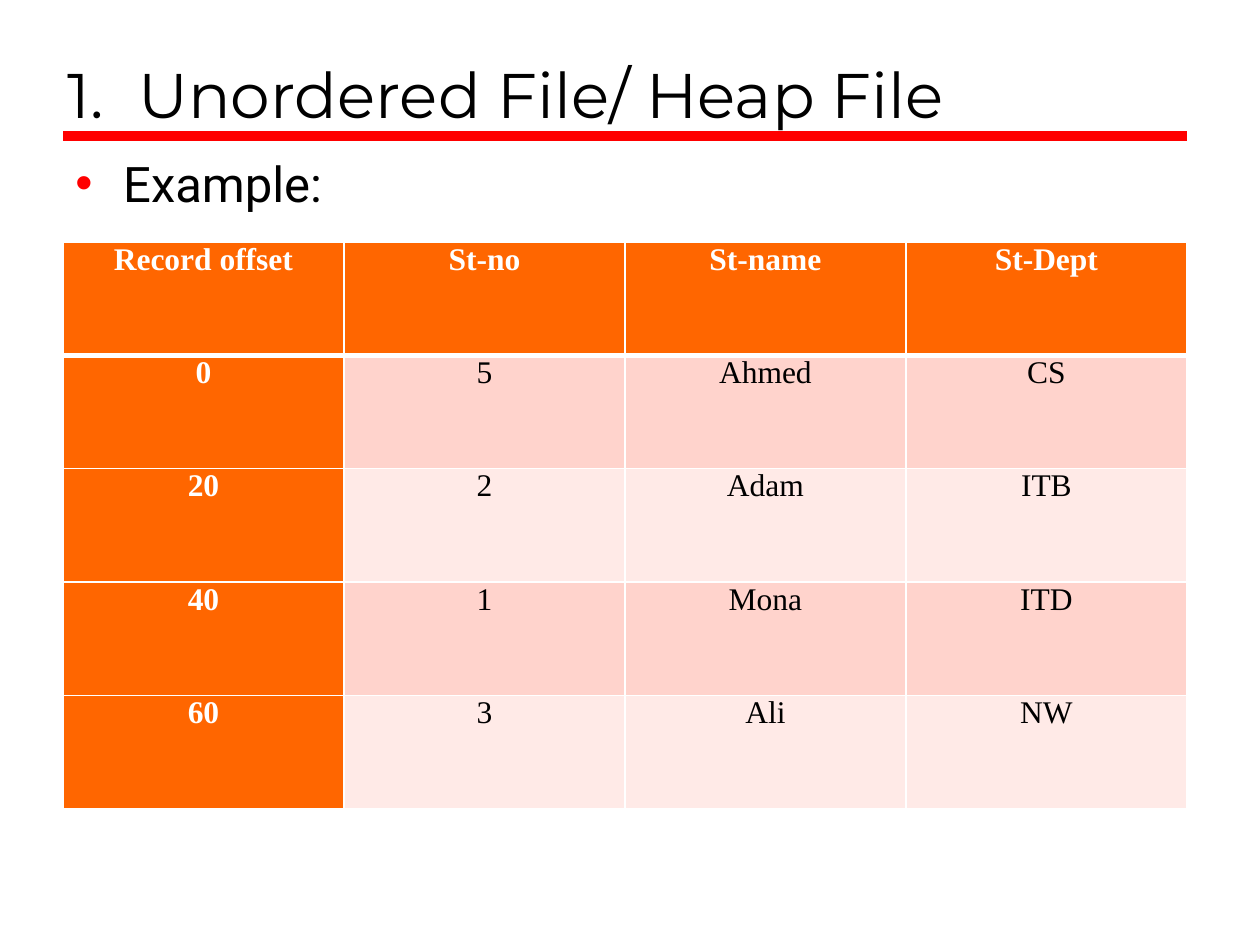
from pptx import Presentation
from pptx.dml.color import RGBColor
from pptx.enum.shapes import MSO_CONNECTOR
from pptx.enum.text import MSO_ANCHOR, PP_ALIGN
from pptx.oxml.ns import qn
from pptx.util import Inches, Pt
from lxml.etree import SubElement, Element

ROWS = [
    ["Record offset", "St-no", "St-name", "St-Dept"],
    ["0", "5", "Ahmed", "CS"],
    ["20", "2", "Adam", "ITB"],
    ["40", "1", "Mona", "ITD"],
    ["60", "3", "Ali", "NW"],
]


def color(code):
    return RGBColor.from_string(code)


def set_font(paragraph, name, size, code, bold=False):
    font = paragraph.font
    font.name, font.size, font.bold = name, Pt(size), bold
    font.color.rgb = color(code)


def add_color(parent, tag, code):
    SubElement(SubElement(parent, qn(tag)), qn("a:srgbClr"), val=code)


def add_border(cell, side, code, width):
    """Draw one cell edge; call in the order L, R, T, B."""
    properties = cell._tc.get_or_add_tcPr()
    edge = Element(qn(f"a:ln{side}"), w=str(Pt(width)))
    add_color(edge, "a:solidFill", code)
    properties.insert("LRTB".index(side), edge)


class SlideBuilder:
    ACCENT = "FF6600"
    RED = "FF0000"
    BLACK = "000000"
    WHITE = "FFFFFF"
    BANDS = ["FFD3CC", "FFEAE7"]

    def __init__(self, page):
        self.page = page

    def rule(self, left, right, top, width):
        line = self.page.shapes.add_connector(
            MSO_CONNECTOR.STRAIGHT, Inches(left), Inches(top), Inches(right), Inches(top))
        line.line.color.rgb = color(self.RED)
        line.line.width = Pt(width)
        SubElement(line._element.spPr, qn("a:effectLst"))

    def text(self, words, area, font, size, indent, anchor=MSO_ANCHOR.TOP, space=0):
        """Add a hanging paragraph and return its properties for a bullet."""
        box = self.page.shapes.add_textbox(*map(Inches, area))
        frame = box.text_frame
        frame.word_wrap = True
        frame.vertical_anchor = anchor
        para = frame.paragraphs[0]
        para.text = words
        para.space_before = Pt(space)
        set_font(para, font, size, self.BLACK)
        properties = para._p.get_or_add_pPr()
        properties.set("marL", str(Inches(indent)))
        properties.set("indent", str(-Inches(indent)))
        return properties

    def numbered_title(self, words, area):
        properties = self.text(words, area, "Montserrat", 36, 0.56, MSO_ANCHOR.BOTTOM)
        bullet = Element(qn("a:buAutoNum"), type="arabicPeriod")
        properties.insert_element_before(bullet, "a:tabLst", "a:defRPr")

    def bullet(self, words, area):
        properties = self.text(words, area, "Roboto", 28, 0.38, space=5.6)
        tint = Element(qn("a:buClr"))
        SubElement(tint, qn("a:srgbClr"), val=self.RED)
        for part in (tint, Element(qn("a:buFont"), typeface="Arial"),
                     Element(qn("a:buChar"), char="•")):
            properties.insert_element_before(part, "a:tabLst", "a:defRPr")

    def table(self, rows, area):
        frame = self.page.shapes.add_table(len(rows), len(rows[0]), *map(Inches, area))
        for row, values in enumerate(rows):
            for column, value in enumerate(values):
                self.cell(frame.table.cell(row, column), value, row, column)

    def cell(self, cell, value, row, column):
        heading = row == 0 or column == 0
        cell.text = value
        cell.margin_left = cell.margin_right = Inches(0.07)
        cell.margin_top = cell.margin_bottom = 0
        cell.fill.solid()
        cell.fill.fore_color.rgb = color(self.ACCENT if heading else self.BANDS[(row - 1) % 2])
        para = cell.text_frame.paragraphs[0]
        para.alignment = PP_ALIGN.CENTER
        if row and column == 0:
            para.space_after = Pt(10)
        set_font(para, "Times New Roman", 18, self.WHITE if heading else self.BLACK, heading)
        top, bottom = 3 if row == 1 else 1, 3 if row == 0 else 1
        for side, width in zip("LRTB", (1, 1, top, bottom)):
            add_border(cell, side, self.WHITE, width)


def main():
    deck = Presentation()
    deck.slide_width, deck.slide_height = Inches(10), Inches(7.5)
    builder = SlideBuilder(deck.slides.add_slide(deck.slide_layouts[6]))
    builder.rule(0.5, 9.42, 1.08, 6)
    builder.numbered_title("Unordered File/ Heap File", (0.44, 0.17, 8.97, 0.92))
    builder.bullet("Example:", (0.5, 1.17, 8.94, 6.17))
    builder.table(ROWS, (0.5, 1.92, 8.92, 4.5))
    deck.save("out.pptx")


if __name__ == "__main__":
    main()
